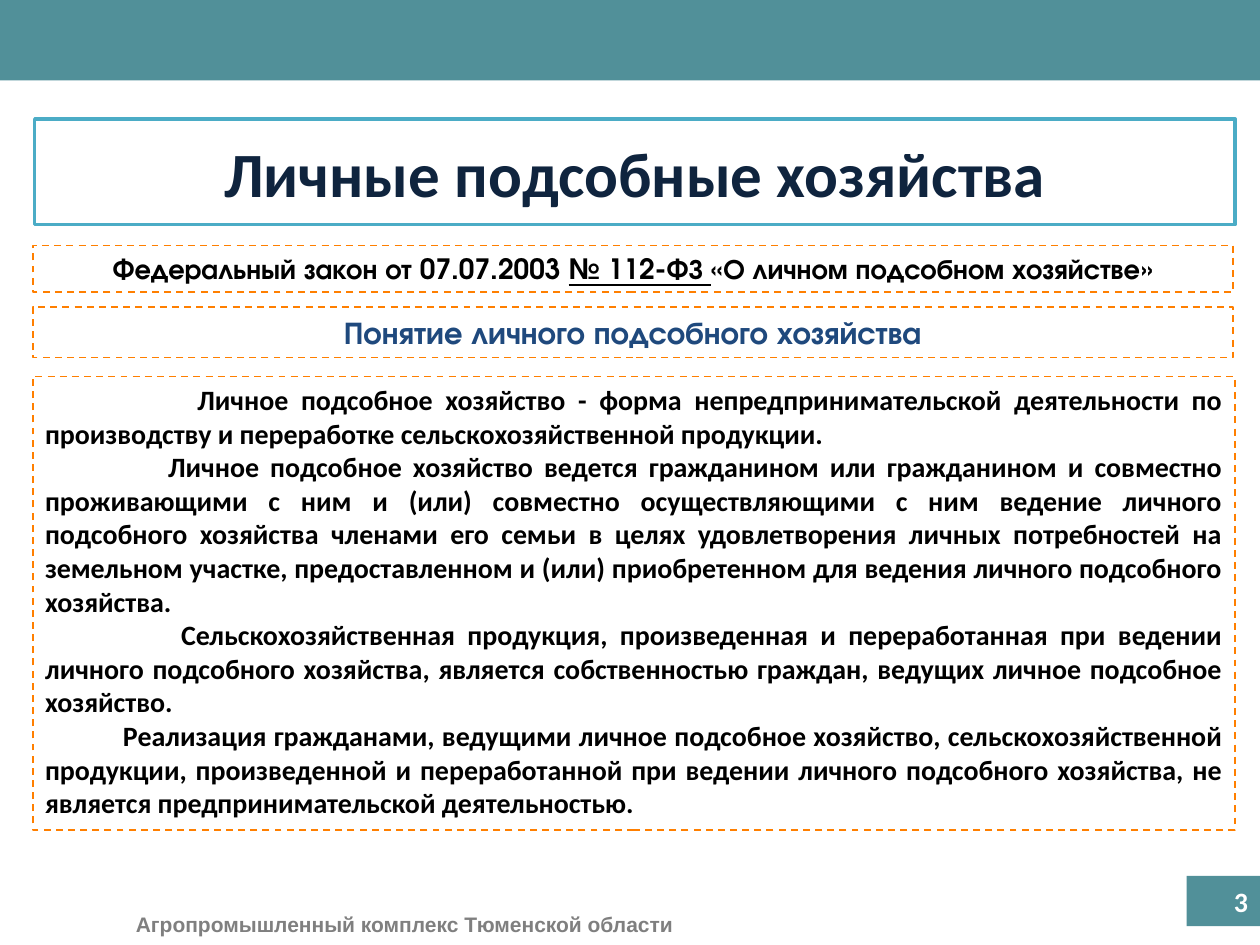
from dataclasses import dataclass

from lxml.etree import SubElement
from pptx import Presentation
from pptx.dml.color import RGBColor
from pptx.enum.dml import MSO_LINE
from pptx.enum.shapes import MSO_SHAPE
from pptx.enum.text import MSO_ANCHOR, MSO_AUTO_SIZE, PP_ALIGN
from pptx.oxml.ns import qn
from pptx.shapes.autoshape import Shape
from pptx.slide import Slide
from pptx.text.text import TextFrame
from pptx.util import Cm, Pt

TEAL = RGBColor(0x51, 0x90, 0x99)
AQUA = RGBColor(0x4B, 0xAC, 0xC6)
ORANGE = RGBColor(0xFF, 0x7F, 0x00)
NAVY = RGBColor(0x0F, 0x24, 0x3E)
BLUE = RGBColor(0x1F, 0x49, 0x7D)
GRAY = RGBColor(0x7F, 0x7F, 0x7F)
BLACK = RGBColor(0x00, 0x00, 0x00)
WHITE = RGBColor(0xFF, 0xFF, 0xFF)
HEADING_FONT = "TeX Gyre Adventor"
BODY_FONT = "Calibri"


@dataclass(frozen=True)
class Box:
    left: float
    top: float
    width: float
    height: float

    def lengths(self) -> tuple[Cm, Cm, Cm, Cm]:
        return Cm(self.left), Cm(self.top), Cm(self.width), Cm(self.height)


@dataclass(frozen=True)
class Run:
    text: str
    underline: bool = False


@dataclass(frozen=True)
class Line:
    runs: tuple[Run, ...]
    indent: float = 0


BANDS = (Box(0, 0, 25.4, 1.62), Box(23.92, 17.66, 1.48, 1.01))
TITLE_BOX = Box(0.7, 2.4, 24.2, 2.13)
LAW_BOX = Box(0.66, 4.95, 24.2, 0.94)
CONCEPT_BOX = Box(0.66, 6.19, 24.2, 1.02)
DETAILS_BOX = Box(0.66, 7.59, 24.24, 9.14)
FOOTER_BOX = Box(2.49, 18.26, 11.46, 0.76)
NUMBER_BOX = Box(19.5, 17.66, 5.91, 1.01)

LAW = Line((
    Run("Федеральный закон от 07.07.2003 "),
    Run("№ 112-ФЗ ", underline=True),
    Run("«О личном подсобном хозяйстве»"),
))
DETAILS = (
    Line((Run("Личное подсобное хозяйство - форма непредпринимательской деятельности "
              "по производству и переработке сельскохозяйственной продукции."),), 3.07),
    Line((Run("Личное подсобное хозяйство ведется гражданином или гражданином и совместно "
              "проживающими с ним и (или) совместно осуществляющими с ним ведение личного "
              "подсобного хозяйства членами его семьи в целях удовлетворения личных "
              "потребностей на земельном участке, предоставленном и (или) приобретенном "
              "для ведения личного подсобного хозяйства."),), 2.48),
    Line((Run("Сельскохозяйственная продукция, произведенная и переработанная при ведении "
              "личного подсобного хозяйства, является собственностью граждан, ведущих "
              "личное подсобное хозяйство."),), 2.74),
    Line((Run("Реализация гражданами, ведущими личное подсобное хозяйство, "
              "сельскохозяйственной продукции, произведенной и переработанной при ведении "
              "личного подсобного хозяйства, не является предпринимательской "
              "деятельностью."),), 1.57),
)


def plain(text: str) -> tuple[Line, ...]:
    return (Line((Run(text),)),)


def write_text(frame: TextFrame, lines: tuple[Line, ...], *, size: int, color: RGBColor,
               font: str = BODY_FONT, align: PP_ALIGN = PP_ALIGN.CENTER,
               anchor: MSO_ANCHOR = MSO_ANCHOR.TOP, wrap: bool = True) -> None:
    frame.word_wrap = wrap
    frame.auto_size = MSO_AUTO_SIZE.NONE
    frame.vertical_anchor = anchor
    for index, line in enumerate(lines):
        paragraph = frame.add_paragraph() if index else frame.paragraphs[0]
        paragraph.alignment = align
        if line.indent:
            paragraph._p.get_or_add_pPr().set("indent", str(Cm(line.indent)))
        for part in line.runs:
            run = paragraph.add_run()
            run.text = part.text
            run.font.name = font
            run.font.size = Pt(size)
            run.font.bold = True
            run.font.underline = part.underline
            run.font.color.rgb = color


def add_band(slide: Slide, box: Box) -> None:
    shape = slide.shapes.add_shape(MSO_SHAPE.RECTANGLE, *box.lengths())
    shape.shadow.inherit = False
    shape.fill.solid()
    shape.fill.fore_color.rgb = TEAL
    shape.line.fill.background()


def add_dashed_box(slide: Slide, box: Box) -> Shape:
    shape = slide.shapes.add_shape(MSO_SHAPE.RECTANGLE, *box.lengths())
    shape.shadow.inherit = False
    shape.fill.background()
    shape.line.color.rgb = ORANGE
    shape.line.width = Pt(1)
    shape.line.dash_style = MSO_LINE.DASH
    return shape


def format_title(slide: Slide) -> None:
    title = slide.shapes.title
    title.left, title.top, title.width, title.height = TITLE_BOX.lengths()
    geometry = SubElement(title.element.spPr, qn("a:prstGeom"), prst="roundRect")
    adjustments = SubElement(geometry, qn("a:avLst"))
    SubElement(adjustments, qn("a:gd"), name="adj", fmla="val 9900")
    title.fill.solid()
    title.fill.fore_color.rgb = WHITE
    title.line.color.rgb = AQUA
    title.line.width = Pt(2)
    write_text(title.text_frame, plain("Личные подсобные хозяйства"), size=36, color=NAVY,
               anchor=MSO_ANCHOR.MIDDLE)


def main() -> None:
    presentation = Presentation()
    presentation.slide_width = Cm(25.4)
    presentation.slide_height = Cm(19.05)
    slide = presentation.slides.add_slide(presentation.slide_layouts[5])

    for band in BANDS:
        add_band(slide, band)
    format_title(slide)

    write_text(add_dashed_box(slide, LAW_BOX).text_frame, (LAW,),
               size=16, color=BLACK, font=HEADING_FONT)
    write_text(add_dashed_box(slide, CONCEPT_BOX).text_frame,
               plain("Понятие личного подсобного хозяйства"),
               size=18, color=BLUE, font=HEADING_FONT)
    write_text(add_dashed_box(slide, DETAILS_BOX).text_frame, DETAILS,
               size=16, color=BLACK, align=PP_ALIGN.JUSTIFY)

    footer = slide.shapes.add_textbox(*FOOTER_BOX.lengths())
    write_text(footer.text_frame, plain("Агропромышленный комплекс Тюменской области"),
               size=12, color=GRAY, font="Arial", align=PP_ALIGN.LEFT, wrap=False)
    number = slide.shapes.add_textbox(*NUMBER_BOX.lengths())
    write_text(number.text_frame, plain("3"), size=16, color=WHITE,
               align=PP_ALIGN.RIGHT, anchor=MSO_ANCHOR.MIDDLE)

    presentation.save("out.pptx")


if __name__ == "__main__":
    main()
